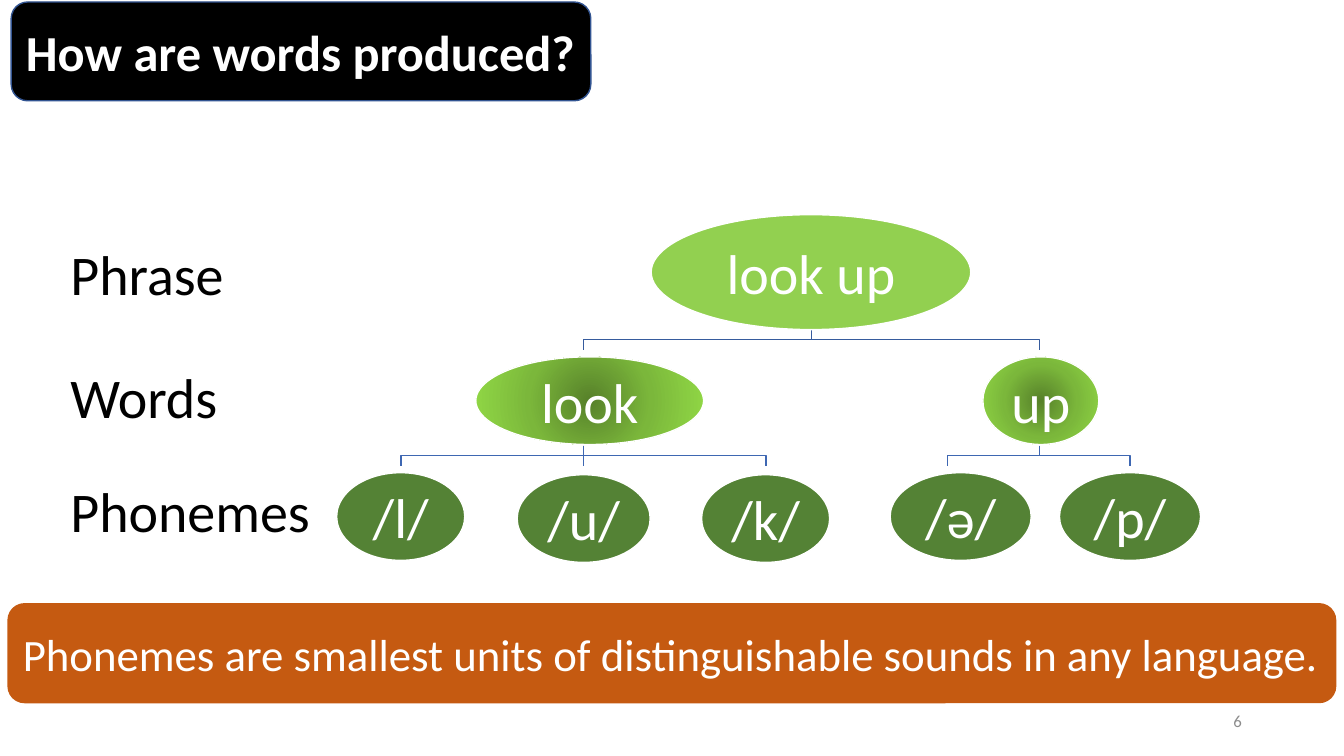
from pptx import Presentation
from pptx import util as u
from pptx.dml.color import RGBColor
from pptx.enum import shapes, text
from pptx.oxml import parse_xml
from pptx.oxml.ns import nsdecls

BLACK = RGBColor(0x00, 0x00, 0x00)
WHITE = RGBColor(0xFF, 0xFF, 0xFF)
GRAY = RGBColor(0x8C, 0x8C, 0x8C)
LIME = RGBColor(0x92, 0xD0, 0x50)
GREEN = RGBColor(0x54, 0x82, 0x35)
ORANGE = RGBColor(0xC5, 0x5A, 0x11)
NAVY = RGBColor(0x32, 0x54, 0x91)
UPPER_LINE = RGBColor(0x36, 0x5B, 0x9D)
LOWER_LINE = RGBColor(0x3E, 0x67, 0xB2)
WORD_STOPS = [(0, RGBColor(0x57, 0x81, 0x2A)),
              (50, RGBColor(0x7B, 0xB7, 0x3B)),
              (100, RGBColor(0x92, 0xDA, 0x46))]

prs = Presentation()
prs.slide_width, prs.slide_height = u.Inches(13.33), u.Inches(7.5)
s = prs.slides.add_slide(prs.slide_layouts[6])
COL, ROW = prs.slide_width / 100, prs.slide_height / 100


def write(sp, words, size, color, align=text.PP_ALIGN.LEFT, bold=False):
    tf = sp.text_frame
    tf.text = words
    tf.word_wrap = True
    p = tf.paragraphs[0]
    p.alignment = align
    f = p.runs[0].font
    f.name, f.size, f.bold = "Calibri", u.Pt(size), bold
    f.color.rgb = color
    return tf


def add_shape(kind, x, y, w, h, fill, line):
    sp = s.shapes.add_shape(kind, int(x * COL), int(y * ROW), int(w * COL), int(h * ROW))
    sp.shadow.inherit = False
    sp.fill.solid()
    sp.fill.fore_color.rgb = fill
    sp.line.color.rgb = line
    sp.line.width = u.Pt(1)
    sp.text_frame.vertical_anchor = text.MSO_ANCHOR.MIDDLE
    return sp


banners = [
    (0.83, 0.27, 43.13, BLACK, NAVY, "How are words produced?", 36, True),
    (0.6, 79.87, 98.78, ORANGE, ORANGE,
     "Phonemes are smallest units of distinguishable sounds in any language.", 32, False),
]
for x, y, w, fill, line, words, size, bold in banners:
    sp = add_shape(shapes.MSO_SHAPE.ROUNDED_RECTANGLE, x, y, w, 13.07, fill, line)
    write(sp, words, size, WHITE, bold=bold)

branches = [
    (77.33, 58.93, LOWER_LINE, [84.08, 70.5]),
    (43.43, 58.93, LOWER_LINE, [57, 43.43, 29.85]),
    (60.38, 43.6, UPPER_LINE, [77.33, 43.43]),
]
DROP = 2.68
for parent, top, color, children in branches:
    for child in children:
        x1, x2 = int(parent * COL), int(child * COL)
        y1, y2, y3 = [int((top + k * DROP / 2) * ROW) for k in range(3)]
        if child == parent:
            sp = s.shapes.add_connector(shapes.MSO_CONNECTOR.STRAIGHT, x1, y1, x2, y3)
            sp._element.spPr.append(parse_xml("<a:effectLst %s/>" % nsdecls("a")))
        else:
            fb = s.shapes.build_freeform(x1, y1)
            fb.add_line_segments([(x1, y2), (x2, y2), (x2, y3)], close=False)
            sp = fb.convert_to_shape()
            sp.shadow.inherit = False
            sp.fill.background()
        sp.line.color.rgb = color
        sp.line.width = u.Pt(1)

nodes = [
    ("look up", 48.45, 28.4, 23.78, 15.2, LIME),
    ("look", 35.4, 47.2, 16.95, 11.6, None),
    ("/l/", 25.05, 62.53, 9.53, 11.6, GREEN),
    ("/u/", 38.48, 62.8, 9.9, 11.6, GREEN),
    ("/k/", 52.2, 62.8, 9.53, 11.6, GREEN),
    ("up", 73.13, 47.2, 8.63, 11.6, None),
    ("/ə/", 66.23, 62.53, 10.5, 11.6, GREEN),
    ("/p/", 78.83, 62.53, 10.5, 11.6, GREEN),
]
for words, x, y, w, h, fill in nodes:
    sp = add_shape(shapes.MSO_SHAPE.OVAL, x, y, w, h, fill or GREEN, WHITE)
    tf = write(sp, words, 40, WHITE, text.PP_ALIGN.CENTER)
    tf.word_wrap = False
    tf.margin_left = tf.margin_right = tf.margin_top = tf.margin_bottom = 0
    if fill is None:
        stops = "".join('<a:gs pos="%d"><a:srgbClr val="%s"/></a:gs>' % (pos * 1000, c)
                        for pos, c in WORD_STOPS)
        grad = parse_xml(
            '<a:gradFill %s rotWithShape="1"><a:gsLst>%s</a:gsLst><a:path path="circle">'
            '<a:fillToRect l="50000" t="50000" r="50000" b="50000"/></a:path></a:gradFill>'
            % (nsdecls("a"), stops))
        spPr = sp._element.spPr
        spPr.replace(spPr.solidFill, grad)

for words, y in [("Phrase", 31.07), ("Words", 47.33), ("Phonemes", 62.4)]:
    sp = s.shapes.add_textbox(int(4.5 * COL), int(y * ROW), int(23.25 * COL), int(10.27 * ROW))
    write(sp, words, 40, BLACK).auto_size = text.MSO_AUTO_SIZE.SHAPE_TO_FIT_TEXT

sp = s.shapes.add_textbox(int(70.65 * COL), int(92.67 * ROW), int(22.5 * COL), int(5.33 * ROW))
tf = write(sp, "6", 12, GRAY, text.PP_ALIGN.RIGHT)
tf.vertical_anchor = text.MSO_ANCHOR.MIDDLE

prs.save("out.pptx")
